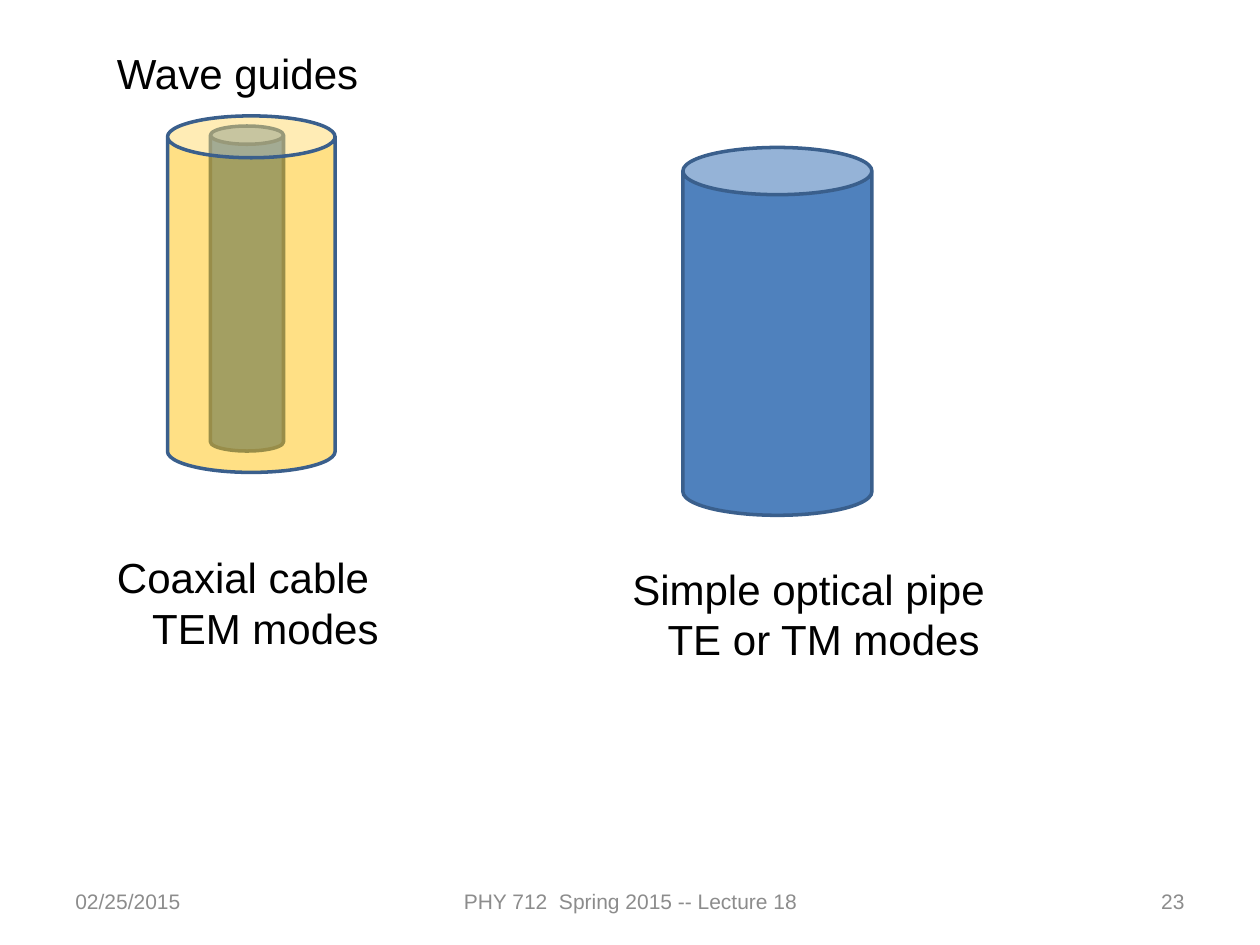
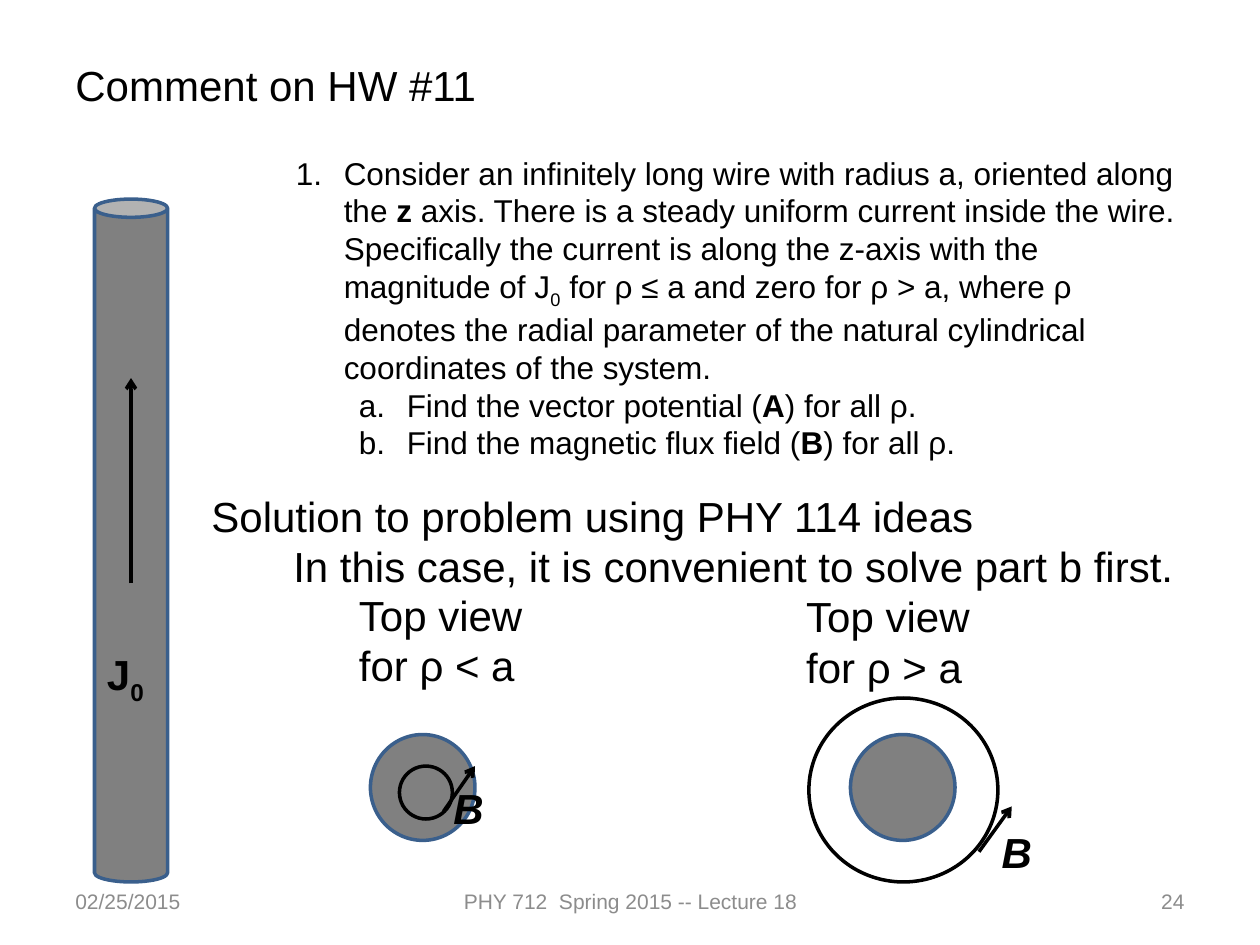
from dataclasses import dataclass
from typing import Optional

from lxml.etree import SubElement
from pptx import Presentation
from pptx.dml.color import RGBColor
from pptx.enum.shapes import MSO_CONNECTOR as LINE, MSO_SHAPE as SHAPE
from pptx.enum.text import MSO_ANCHOR as ANCHOR, PP_ALIGN as ALIGN
from pptx.oxml.ns import qn
from pptx.util import Inches, Pt

COLORS = {
    "text": "000000",
    "footer": "8C8C8C",
    "pipe": "4F81BD",
    "sheath": "FFC000",
    "wire": "808080",
    "outline": "3A5F8C",
}
FONT = "Arial"
LINE_WIDTH = Pt(2)
DATE = "02/25/2015"
COURSE = "PHY 712  Spring 2015 -- Lecture 18"


@dataclass
class Run:
    text: str
    bold: bool = False
    italic: bool = False
    subscript: bool = False


@dataclass
class Para:
    runs: list[Run]
    indent: float = 0
    hanging: float = 0
    numbering: str = ""
    level: int = 0


@dataclass
class TextBox:
    at: tuple[float, float, float, float]
    paras: list[Para]
    size: int = 24
    color: str = "text"
    align: ALIGN = ALIGN.LEFT
    anchor: ANCHOR = ANCHOR.TOP


@dataclass
class Solid:
    kind: SHAPE
    at: tuple[float, float, float, float]
    fill: Optional[str] = None
    line: str = "outline"
    opacity: int = 100


@dataclass
class Arrow:
    start: tuple[float, float]
    end: tuple[float, float]


def rgb(name: str) -> RGBColor:
    return RGBColor.from_string(COLORS[name])


def plain(text: str, indent: float = 0) -> Para:
    return Para([Run(text)], indent)


def add_para(p, para: Para, box: TextBox) -> None:
    p.alignment, p.level = box.align, para.level
    pPr = p._p.get_or_add_pPr()
    if para.indent:
        pPr.set("marL", str(Inches(para.indent)))
        pPr.set("indent", str(Inches(-para.hanging)))
    if para.numbering:
        SubElement(pPr, qn("a:buFont"), typeface=FONT)
        SubElement(pPr, qn("a:buAutoNum"), type=para.numbering)
    for run in para.runs:
        r = p.add_run()
        r.text = run.text
        formats = {"name": FONT, "size": Pt(box.size),
                   "bold": run.bold, "italic": run.italic}
        for key, value in formats.items():
            setattr(r.font, key, value)
        r.font.color.rgb = rgb(box.color)
        if run.subscript:
            r._r.get_or_add_rPr().set("baseline", "-25000")


def add_text(slide, box: TextBox) -> None:
    tf = slide.shapes.add_textbox(*map(Inches, box.at)).text_frame
    tf.word_wrap = True
    tf.vertical_anchor = box.anchor
    for i, para in enumerate(box.paras):
        add_para(tf.add_paragraph() if i else tf.paragraphs[0], para, box)


def add_solid(slide, solid: Solid) -> None:
    s = slide.shapes.add_shape(solid.kind, *map(Inches, solid.at))
    s.shadow.inherit = False
    s.line.color.rgb = rgb(solid.line)
    s.line.width = LINE_WIDTH
    if solid.fill is None:
        s.fill.background()
        return
    s.fill.solid()
    s.fill.fore_color.rgb = rgb(solid.fill)
    if solid.opacity < 100:
        color = s._element.spPr.find(qn("a:solidFill"))[0]
        SubElement(color, qn("a:alpha"), val=str(solid.opacity * 1000))


def add_arrow(slide, arrow: Arrow) -> None:
    ends = map(Inches, arrow.start + arrow.end)
    c = slide.shapes.add_connector(LINE.STRAIGHT, *ends)
    c.line.color.rgb = rgb("text")
    c.line.width = LINE_WIDTH
    SubElement(c.line._get_or_add_ln(), qn("a:tailEnd"), type="arrow")
    SubElement(c._element.spPr, qn("a:effectLst"))


DRAW = {TextBox: add_text, Solid: add_solid, Arrow: add_arrow}


def footer(number: int) -> list[TextBox]:
    cells = [(0.5, 2.33, DATE, ALIGN.LEFT),
             (3.42, 3.17, COURSE, ALIGN.CENTER),
             (7.17, 2.33, str(number), ALIGN.RIGHT)]
    return [TextBox((x, 6.95, w, 0.4), [plain(text)], 12, "footer",
                    align, ANCHOR.MIDDLE) for x, w, text, align in cells]


def caption(x: float, y: float, w: float, name: str, modes: str) -> TextBox:
    return TextBox((x, y, w, 0.91), [plain(name), plain(modes, 0.28)])


def top_view(x: float, y: float, condition: str) -> TextBox:
    return TextBox((x, y, 1.92, 0.91), [plain(f"Top view for {condition}")])


def wire_section(x: float) -> Solid:
    return Solid(SHAPE.OVAL, (x, 5.83, 0.83, 0.84), "wire")


def field_loop(x: float, y: float, w: float, h: float) -> Solid:
    return Solid(SHAPE.OVAL, (x, y, w, h), line="text")


def field_label(x: float, y: float) -> TextBox:
    return TextBox((x, y, 0.72, 0.5), [Para([Run("B", bold=True, italic=True)])])


def question(quantity: str, symbol: str) -> Para:
    runs = [Run(f"Find the {quantity} ("), Run(symbol, bold=True), Run(") for all ρ.")]
    return Para(runs, 0.88, 0.38, "alphaLcPeriod", 1)


PROBLEM = [
    Para([
        Run("Consider an infinitely long wire with radius a, oriented along the "),
        Run("z", bold=True),
        Run(" axis. There is a steady uniform current inside the wire. "
            "Specifically the current is along the z-axis with the magnitude of J"),
        Run("0", subscript=True),
        Run(" for ρ ≤ a and zero for ρ > a, where ρ denotes the radial parameter "
            "of the natural cylindrical coordinates of the system."),
    ], 0.38, 0.38, "arabicPeriod"),
    question("vector potential", "A"),
    question("magnetic flux field", "B"),
]

WAVE_GUIDES = [
    Solid(SHAPE.CAN, (1.67, 1, 0.58, 2.58), "pipe"),
    Solid(SHAPE.CAN, (1.33, 0.92, 1.33, 2.83), "sheath", opacity=48),
    TextBox((0.83, 0.33, 6.33, 0.5), [plain("Wave guides")]),
    Solid(SHAPE.CAN, (5.42, 1.17, 1.5, 2.92), "pipe"),
    caption(0.83, 4.33, 2.58, "Coaxial cable", "TEM modes"),
    caption(4.92, 4.42, 3.58, "Simple optical pipe", "TE or TM modes"),
]

HOMEWORK = [
    TextBox((0.5, 0.42, 9, 0.5), [plain("Comment on HW #11")]),
    Solid(SHAPE.CAN, (0.75, 1.58, 0.58, 5.42), "wire"),
    TextBox((2.25, 1.17, 7.25, 2.52), PROBLEM, 18),
    TextBox((1.58, 3.84, 8.17, 0.91), [
        plain("Solution to problem using PHY 114 ideas"),
        plain("In this case, it is convenient to solve part b first.", 0.65),
    ]),
    top_view(2.75, 4.63, "ρ < a"),
    top_view(6.3, 4.64, "ρ > a"),
    wire_section(2.94),
    wire_section(6.75),
    field_loop(3.17, 6.08, 0.42, 0.42),
    Arrow((3.52, 6.44), (3.77, 6.08)),
    field_label(3.5, 6.16),
    field_label(7.85, 6.51),
    Arrow((7.77, 6.76), (8.03, 6.4)),
    field_loop(6.42, 5.54, 1.5, 1.46),
    Arrow((1.04, 4.63), (1.04, 3)),
    TextBox((0.75, 5.1, 0.58, 0.5),
            [Para([Run("J", bold=True), Run("0", bold=True, subscript=True)])]),
]


def main() -> None:
    prs = Presentation()
    prs.slide_width, prs.slide_height = Inches(10), Inches(7.5)
    for number, items in enumerate([WAVE_GUIDES, HOMEWORK], start=23):
        slide = prs.slides.add_slide(prs.slide_layouts[6])
        for item in footer(number) + items:
            DRAW[type(item)](slide, item)
    prs.save("out.pptx")


if __name__ == "__main__":
    main()
